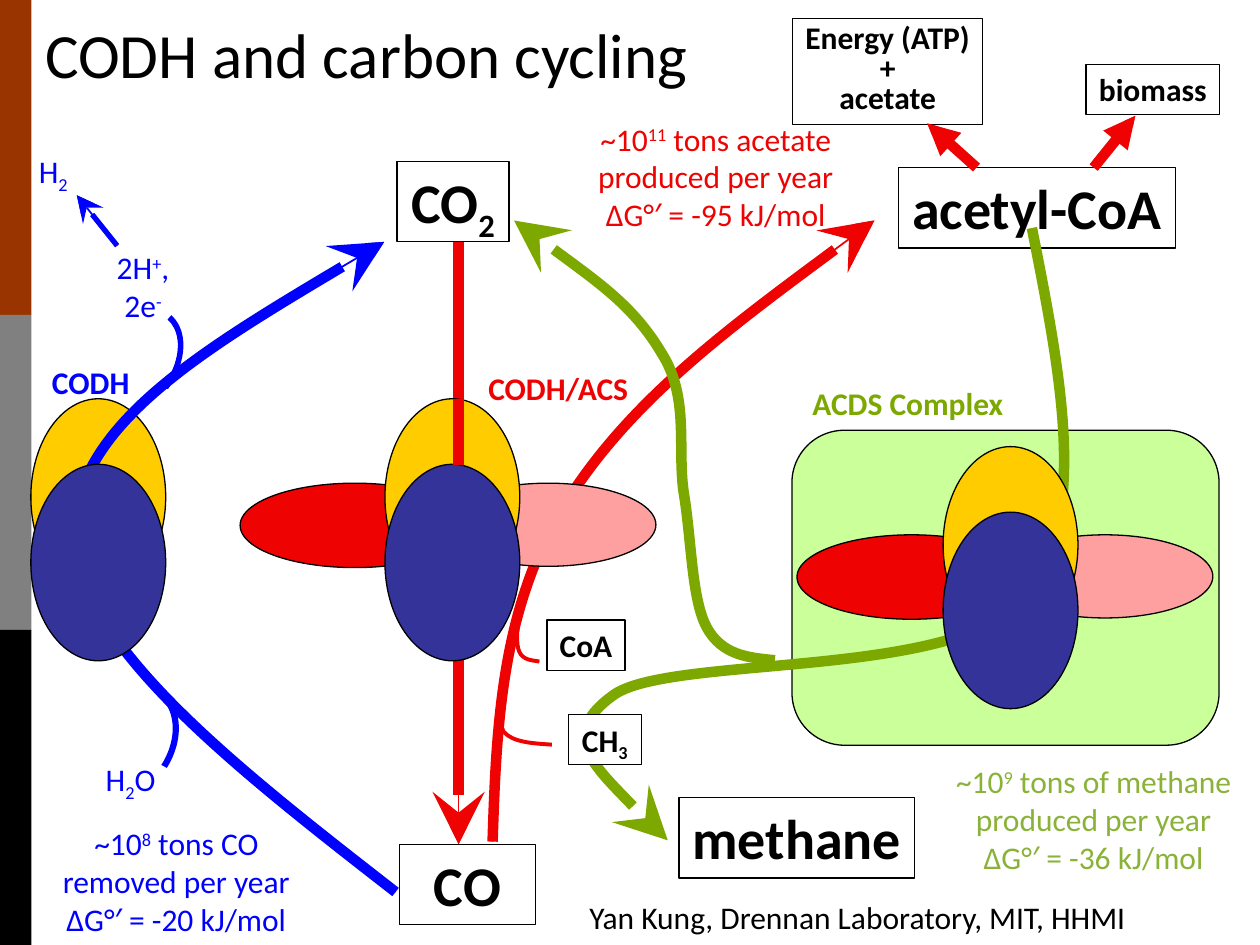
from dataclasses import dataclass
from typing import Any

from lxml.etree import SubElement
from pptx import Presentation
from pptx.dml.color import RGBColor
from pptx.enum.shapes import MSO_CONNECTOR, MSO_SHAPE
from pptx.enum.text import MSO_ANCHOR, MSO_AUTO_SIZE, PP_ALIGN
from pptx.oxml.ns import qn
from pptx.util import Inches, Pt

BLACK = RGBColor(0x00, 0x00, 0x00)
WHITE = RGBColor(0xFF, 0xFF, 0xFF)
RUST = RGBColor(0x99, 0x33, 0x00)
GRAY = RGBColor(0x80, 0x80, 0x80)
BLUE = RGBColor(0x00, 0x00, 0xFF)
INDIGO = RGBColor(0x33, 0x33, 0x99)
YELLOW = RGBColor(0xFF, 0xCC, 0x00)
RED = RGBColor(0xEE, 0x02, 0x02)
PINK = RGBColor(0xFE, 0xA0, 0xA0)
GREEN = RGBColor(0x7C, 0xA8, 0x00)
LEAF = RGBColor(0x8B, 0xB2, 0x38)
LIME = RGBColor(0xCA, 0xFF, 0x99)

FONT = "Calibri"
DOMAIN = (1.56, 1.07)


@dataclass
class Region:
    shapes: Any
    left: float
    top: float

    def point(self, x, y):
        return Inches(self.left + x), Inches(self.top + y)

    def block(self, kind, x, y, size, color, outline=BLACK, rotation=0):
        width, height = size
        shape = self.shapes.add_shape(kind, *self.point(x, y), Inches(width), Inches(height))
        shape.shadow.inherit = False
        shape.rotation = rotation
        shape.fill.solid()
        shape.fill.fore_color.rgb = color
        if outline is None:
            shape.line.fill.background()
        else:
            shape.line.color.rgb = outline
            shape.line.width = Pt(0.75)
        return shape

    def oval(self, x, y, size, color):
        self.block(MSO_SHAPE.OVAL, x, y, size, color, rotation=90)

    def core(self, x, y):
        self.oval(x, y, DOMAIN, YELLOW)
        self.oval(x, y + 0.52, DOMAIN, INDIGO)

    def lobes(self, x, y):
        self.oval(x, y, (0.67, 1.82), RED)
        self.oval(x + 1.54, y + 0.05, (0.66, 1.71), PINK)

    def arc(self, x, y, size, rotation, adjustments):
        shape = self.block(MSO_SHAPE.BLOCK_ARC, x, y, size, BLUE, None, rotation)
        for index, value in enumerate(adjustments):
            shape.adjustments[index] = value

    def line(self, start, end, color, widths=(6, 1), head=None, head_size="lg"):
        for width in widths:
            connector = self.shapes.add_connector(
                MSO_CONNECTOR.STRAIGHT, *self.point(*start), *self.point(*end))
            style_stroke(connector, color, width, head, head_size)
            SubElement(connector._element.spPr, qn("a:effectLst"))

    def curve(self, points, color, widths=(6, 1), head=None):
        start, *rest = [self.point(*point) for point in points]
        for width in widths:
            builder = self.shapes.build_freeform(*start)
            builder.add_line_segments(rest, close=False)
            shape = builder.convert_to_shape()
            shape.shadow.inherit = False
            shape.fill.background()
            style_stroke(shape, color, width, head)
            bend(shape)

    def label(self, x, y, size, lines, color=BLACK, points=18, bold=False,
              boxed=False, wrap=False, align=PP_ALIGN.CENTER, spacing=None):
        width, height = size
        shape = self.shapes.add_textbox(*self.point(x, y), Inches(width), Inches(height))
        if boxed:
            shape.line.color.rgb = BLACK
            shape.line.width = Pt(0.75)
        frame = shape.text_frame
        frame.word_wrap = wrap
        frame.auto_size = MSO_AUTO_SIZE.SHAPE_TO_FIT_TEXT
        for index, line in enumerate(lines):
            paragraph = frame.add_paragraph() if index else frame.paragraphs[0]
            paragraph.alignment = align
            paragraph.line_spacing = spacing
            write_runs(paragraph, line, color, points, bold)
        return shape

    def formula_box(self, x, y, width, text):
        return self.label(x, y, (width, 0.64), [text], points=32, bold=True, boxed=True)

    def small_box(self, x, y, width, text):
        return self.label(x, y, (width, 0.4), [text], bold=True, boxed=True)


def style_stroke(shape, color, width, head, head_size="lg"):
    shape.line.color.rgb = color
    shape.line.width = Pt(width)
    if head:
        stroke = shape._element.spPr.find(qn("a:ln"))
        SubElement(stroke, qn("a:tailEnd"), type=head, w=head_size, len=head_size)


def bend(shape):
    outline = next(shape._element.iter(qn("a:path")))
    segments = outline.findall(qn("a:lnTo"))
    for first in range(0, len(segments), 3):
        cubic = SubElement(outline, qn("a:cubicBezTo"))
        for segment in segments[first:first + 3]:
            cubic.append(segment[0])
            outline.remove(segment)


def write_runs(paragraph, line, color, points, bold):
    mark, baseline = ("_", "-25000") if "_" in line else ("^", "30000")
    for index, piece in enumerate(line.split(mark)):
        if not piece:
            continue
        run = paragraph.add_run()
        run.text = piece
        run.font.name = FONT
        run.font.size = Pt(points)
        run.font.bold = bold
        run.font.color.rgb = color
        if index % 2:
            run._r.get_or_add_rPr().set("baseline", baseline)


def add_side_bars(region):
    for index, color in enumerate((RUST, GRAY, BLACK)):
        region.block(MSO_SHAPE.RECTANGLE, 0, 2.5 * index, (0.25, 2.5), color, None)


def add_title(slide, region):
    title = slide.shapes.title
    title.left, title.top = region.point(0, 0)
    title.width, title.height = Inches(5.69), Inches(0.71)
    title.text_frame.text = "CODH and carbon cycling"
    title.text_frame.vertical_anchor = MSO_ANCHOR.TOP
    paragraph = title.text_frame.paragraphs[0]
    paragraph.alignment = PP_ALIGN.LEFT
    font = paragraph.runs[0].font
    font.name, font.size, font.color.rgb = FONT, Pt(36), BLACK


def add_codh_cycle(region):
    region.oval(0, 2.41, DOMAIN, YELLOW)
    region.curve([(3.14, 6.08), (1.88, 5.1), (0.61, 4.11), (0.59, 3.25),
                  (0.58, 2.39), (1.81, 1.65), (3.05, 0.92)], BLUE, head="stealth")
    region.oval(0, 2.93, DOMAIN, INDIGO)
    region.arc(0.41, 4.49, (1.08, 0.83), 129.5, (108, 154.36, 0.06))
    region.arc(0.46, 1.53, (1.08, 0.75), 131.7, (108, 154.36, 0.06))
    region.arc(0.45, 4.46, (1, 0.83), 131.7, (108, 153.77, 0.01))
    region.arc(0.47, 1.41, (0.99, 0.83), 142.4, (108, 152.72, 0.02))
    region.line((0.93, 0.95), (0.61, 0.55), BLUE, (3, 1), "stealth")
    region.label(0.21, 0.16, (0.45, 0.4), ["H_2_"], BLUE, align=PP_ALIGN.LEFT)
    region.label(0.82, 0.92, (0.63, 0.71), ["2H^+^,", "2e^-^"], BLUE)
    region.label(0.31, 1.83, (0.82, 0.4), ["CODH"], BLUE, bold=True)
    region.label(0.74, 4.98, (0.61, 0.4), ["H_2_O"], BLUE, align=PP_ALIGN.LEFT)
    region.label(0.08, 5.49, (2.64, 1.01),
                 ["~10^8^ tons CO", "removed per year", "ΔG°′ = -20 kJ/mol"],
                 BLUE, wrap=True)


def add_acetate_pathway(region):
    region.curve([(1.91, 6.68), (1.94, 5.75), (1.98, 4.83), (2.48, 4.01),
                  (2.99, 3.19), (3.96, 2.47), (4.94, 1.75)], RED, head="stealth")
    region.line((1.64, 1.92), (1.64, 6.7), RED, head="stealth")
    region.lobes(0.48, 3.26)
    region.core(0.81, 3.41)
    region.line((1.64, 3.17), (1.64, 3.69), RED)
    region.curve([(2.28, 5.25), (2.22, 5.24), (2.15, 5.24), (2.12, 5.17),
                  (2.09, 5.1), (2.11, 4.97), (2.12, 4.83)], RED, (2.25, 1))
    region.curve([(2.38, 5.91), (2.22, 5.9), (2.07, 5.89), (2, 5.81),
                  (1.94, 5.72), (1.97, 5.56), (2, 5.4)], RED, (2.25, 1))
    region.formula_box(1.15, 1.28, 0.89, "CO_2_")
    region.formula_box(1.17, 6.7, 1.08, "CO").text_frame.word_wrap = True
    region.formula_box(5.13, 1.33, 2.2, "acetyl-CoA")
    region.small_box(2.34, 4.92, 0.62, "CoA")
    region.label(1.77, 2.88, (1.32, 0.4), ["CODH/ACS"], RED, bold=True)
    region.label(2.44, 0.9, (2.48, 1.01),
                 ["~10^11^ tons acetate produced per year", "ΔG°′ = -95 kJ/mol"],
                 RED, wrap=True)


def add_methane_pathway(region):
    region.block(MSO_SHAPE.ROUNDED_RECTANGLE, 2.73, 1.97, (2.5, 3.39), LIME, rotation=90)
    region.lobes(2.9, 2.67)
    region.curve([(2.15, 4.24), (1.94, 4.22), (1.73, 4.2), (1.61, 3.98),
                  (1.49, 3.76), (1.49, 3.3), (1.43, 2.93), (1.37, 2.57), (1.48, 2.16),
                  (1.25, 1.8), (1.03, 1.43), (0.55, 1.09), (0.08, 0.75)],
                 GREEN, (6,), "stealth")
    region.curve([(4.19, 0.81), (4.42, 1.98), (4.66, 3.16), (4.11, 3.77),
                  (3.56, 4.39), (1.35, 4.2), (0.88, 4.51), (0.42, 4.83),
                  (0.86, 5.25), (1.3, 5.67)], GREEN, (6,), "stealth")
    region.core(3.24, 2.79)
    methyl = region.small_box(0.51, 4.67, 0.58, "CH_3_")
    methyl.fill.solid()
    methyl.fill.fore_color.rgb = WHITE
    region.formula_box(1.39, 5.33, 1.87, "methane")
    region.label(2.34, 2, (1.73, 0.4), ["ACDS Complex"], GREEN, bold=True)
    region.label(3.36, 5, (2.64, 1.01),
                 ["~10^9^ tons of methane produced per year", "ΔG°′ = -36 kJ/mol"],
                 LEAF, wrap=True)


def add_products(region):
    region.small_box(2.62, 0.51, 1.06, "biomass")
    region.label(0.29, 0.15, (1.51, 0.84), ["Energy (ATP)", "+", "acetate"],
                 bold=True, boxed=True, spacing=0.8)
    region.line((1.75, 1.33), (1.36, 0.98), RED, head="triangle", head_size="med")
    region.line((2.68, 1.33), (3.01, 0.92), RED, head="triangle", head_size="med")


def main():
    presentation = Presentation()
    presentation.slide_width, presentation.slide_height = Inches(10), Inches(7.5)
    slide = presentation.slides.add_slide(presentation.slide_layouts[5])
    shapes = slide.shapes
    add_side_bars(Region(shapes, 0, 0))
    add_title(slide, Region(shapes, 0.26, 0.07))
    add_codh_cycle(Region(shapes, 0, 1))
    add_acetate_pathway(Region(shapes, 2, 0))
    add_methane_pathway(Region(shapes, 4, 1))
    add_products(Region(shapes, 6, 0))
    Region(shapes, 4.58, 7.08).label(
        0, 0, (5.5, 0.42), ["Yan Kung, Drennan Laboratory, MIT, HHMI"],
        wrap=True, align=PP_ALIGN.LEFT)
    presentation.save("out.pptx")


if __name__ == "__main__":
    main()
